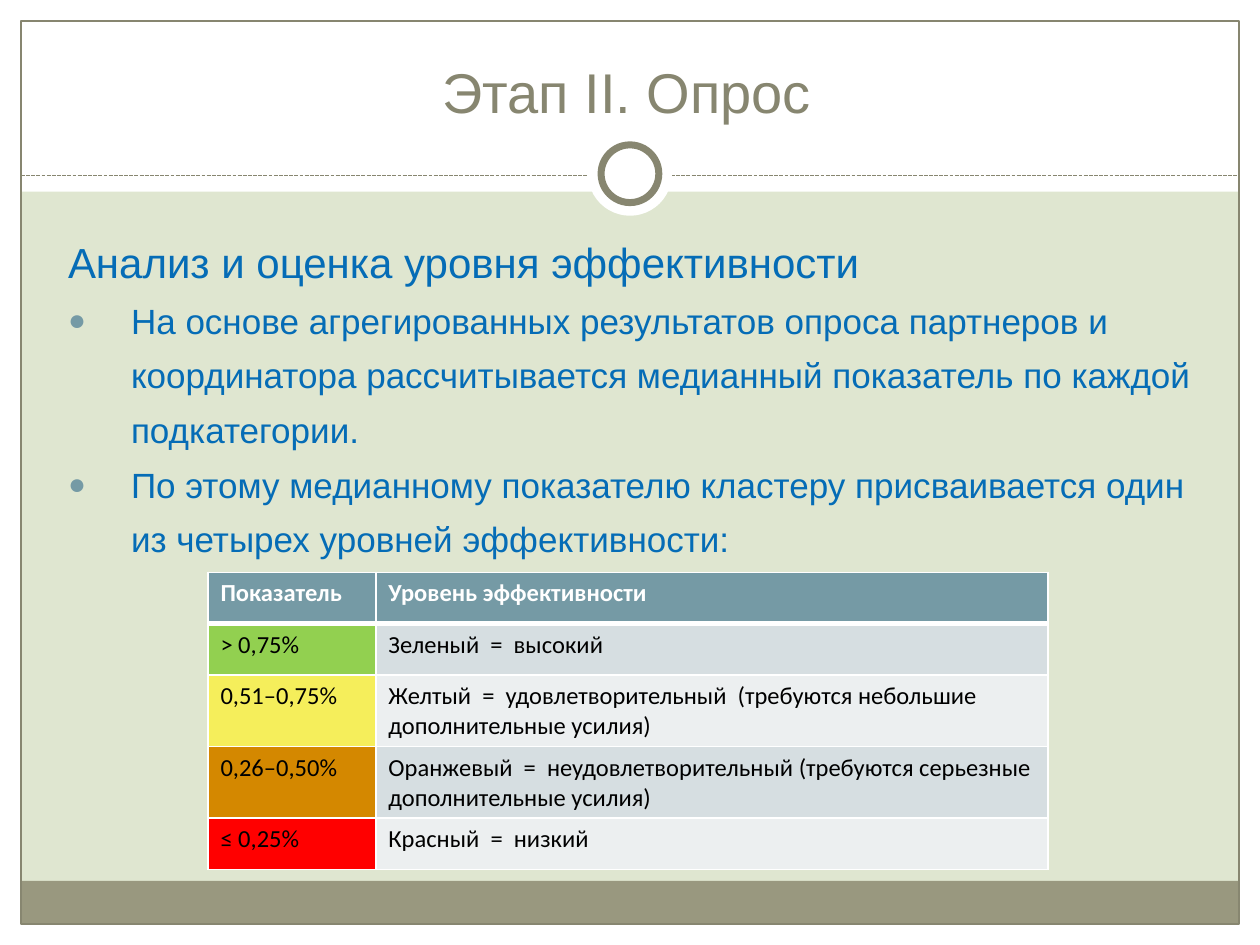
from dataclasses import dataclass
from typing import Optional

import pptx
import pptx.dml.color
import pptx.enum.dml
import pptx.enum.shapes
import pptx.enum.text
import pptx.oxml
import pptx.oxml.ns
import pptx.util
from lxml import etree

SHAPE = pptx.enum.shapes.MSO_SHAPE
ALIGN = pptx.enum.text.PP_ALIGN
ANCHOR = pptx.enum.text.MSO_ANCHOR
COLUMNS, ROWS = 120, 90
CELL = pptx.util.Inches(10) // COLUMNS


@dataclass(frozen=True)
class Theme:
    background: str = "DFE6D0"
    white: str = "FFFFFF"
    black: str = "000000"
    olive: str = "878670"
    footer: str = "99987F"
    blue: str = "056CB6"
    teal: str = "759AA5"
    bands: tuple = ("D6DEE1", "ECEFF0")
    heading_font: str = "Arial"
    table_font: str = "Calibri"
    title_size: int = 32
    lead_size: int = 24
    bullet_size: int = 20
    table_size: int = 14
    thin: float = 0.75
    ring: float = 4


@dataclass(frozen=True)
class Box:
    """A place in grid columns and rows."""
    left: float
    top: float
    width: float
    height: float

    def lengths(self) -> list:
        return [grid(n) for n in (self.left, self.top, self.width, self.height)]


@dataclass(frozen=True)
class Panel:
    box: Box
    fill: Optional[str] = None
    line: Optional[str] = None
    weight: float = 0
    kind: int = SHAPE.RECTANGLE


@dataclass(frozen=True)
class Level:
    score: str
    meaning: str
    color: str


THEME = Theme()

FRAME_PANELS = [
    Panel(Box(0, 88, COLUMNS, 2), THEME.white),
    Panel(Box(0, 0, COLUMNS, 18.25), THEME.white),
    Panel(Box(0, 0, 2, ROWS), THEME.white),
    Panel(Box(118, 0, 2, ROWS), THEME.white),
    Panel(Box(2, 83.9, 116, 4.1), THEME.footer),
    Panel(Box(2, 2, 116, 86), None, THEME.olive, THEME.thin),
]
RING_PANELS = [
    Panel(Box(56, 12.55, 8, 8), THEME.white, kind=SHAPE.OVAL),
    Panel(Box(57.25, 13.8, 5.5, 5.5), THEME.white, THEME.olive, THEME.ring, SHAPE.OVAL),
]
DIVIDER_ROW = 16.75
TITLE_BOX = Box(3.7, 2.5, 112, 10)
BODY_BOX = Box(4, 20, 111.6, 60)
TABLE_BOX = Box(19.8, 54.5, 80, 24.5)
TABLE_COLUMNS = (16, 64)

TITLE = "Этап II. Опрос"
LEAD = "Анализ и оценка уровня эффективности"
POINTS = [
    "На основе агрегированных результатов опроса партнеров и координатора "
    "рассчитывается медианный показатель по каждой подкатегории.",
    "По этому медианному показателю кластеру присваивается один из четырех "
    "уровней эффективности:",
]
HEADER = ("Показатель", "Уровень эффективности")
LEVELS = [
    Level("> 0,75%", "Зеленый  =  высокий", "92D050"),
    Level("0,51–0,75%", "Желтый  =  удовлетворительный  (требуются небольшие "
          "дополнительные усилия)", "F5EE5B"),
    Level("0,26–0,50%", "Оранжевый  =  неудовлетворительный (требуются серьезные "
          "дополнительные усилия)", "D48800"),
    Level("≤ 0,25%", "Красный  =  низкий", "FF0000"),
]


def grid(cells: float) -> int:
    return round(cells * CELL)


def rgb(color: str) -> pptx.dml.color.RGBColor:
    return pptx.dml.color.RGBColor.from_string(color)


def set_fill(fill, color: Optional[str]) -> None:
    if color is None:
        fill.background()
    else:
        fill.solid()
        fill.fore_color.rgb = rgb(color)


def write(paragraph, text: str, color: str, size: float, font: str, bold=False) -> None:
    run = paragraph.add_run()
    run.text = text
    for name, value in {"name": font, "size": pptx.util.Pt(size), "bold": bold}.items():
        setattr(run.font, name, value)
    run.font.color.rgb = rgb(color)


def draw_panel(slide, panel: Panel) -> None:
    shape = slide.shapes.add_shape(panel.kind, *panel.box.lengths())
    shape.shadow.inherit = False
    set_fill(shape.fill, panel.fill)
    set_fill(shape.line.fill, panel.line)
    if panel.line:
        shape.line.width = pptx.util.Pt(panel.weight)


def draw_divider(slide) -> None:
    row = grid(DIVIDER_ROW)
    divider = slide.shapes.add_connector(
        pptx.enum.shapes.MSO_CONNECTOR.STRAIGHT, grid(2), row, grid(118), row)
    divider.line.color.rgb = rgb(THEME.olive)
    divider.line.width = pptx.util.Pt(THEME.thin)
    divider.line.dash_style = pptx.enum.dml.MSO_LINE.SQUARE_DOT
    etree.SubElement(divider._element.spPr, pptx.oxml.ns.qn("a:effectLst"))


def add_text_frame(slide, box: Box, anchor):
    frame = slide.shapes.add_textbox(*box.lengths()).text_frame
    frame.word_wrap = True
    frame.vertical_anchor = anchor
    return frame


def indent(paragraph, margin: float, first_line: float) -> None:
    properties = paragraph._p.get_or_add_pPr()
    properties.set("marL", str(grid(margin)))
    properties.set("indent", str(grid(first_line)))


def add_bullet(paragraph) -> None:
    properties = paragraph._p.get_or_add_pPr()
    ns = pptx.oxml.ns.nsdecls("a")
    for xml in (f'<a:buClr {ns}><a:srgbClr val="{THEME.teal}"/></a:buClr>',
                f'<a:buSzPct {ns} val="85000"/>',
                f'<a:buFont {ns} typeface="{THEME.heading_font}"/>',
                f'<a:buChar {ns} char="●"/>'):
        properties.append(pptx.oxml.parse_xml(xml))


def draw_title(slide) -> None:
    paragraph = add_text_frame(slide, TITLE_BOX, ANCHOR.BOTTOM).paragraphs[0]
    paragraph.alignment = ALIGN.CENTER
    write(paragraph, TITLE, THEME.olive, THEME.title_size, THEME.heading_font)


def draw_body(slide) -> None:
    frame = add_text_frame(slide, BODY_BOX, ANCHOR.TOP)
    lead = frame.paragraphs[0]
    lead.line_spacing = 1.4
    lead.space_before = pptx.util.Pt(2)
    indent(lead, 1.3, 0)
    write(lead, LEAD, THEME.blue, THEME.lead_size, THEME.heading_font)
    for text in POINTS:
        point = frame.add_paragraph()
        point.line_spacing = 1.3
        indent(point, 7.3, -6)
        add_bullet(point)
        write(point, text, THEME.blue, THEME.bullet_size, THEME.heading_font)


def set_borders(cell, bottom: float) -> None:
    properties = cell._tc.get_or_add_tcPr()
    widths = {"lnL": 1, "lnR": 1, "lnT": 1, "lnB": bottom}
    for position, (side, width) in enumerate(widths.items()):
        properties.insert(position, pptx.oxml.parse_xml(
            f'<a:{side} {pptx.oxml.ns.nsdecls("a")} w="{pptx.util.Pt(width)}"><a:solidFill>'
            f'<a:srgbClr val="{THEME.white}"/></a:solidFill></a:{side}>'))


def fill_cell(cell, text: str, fill: str, header: bool) -> None:
    set_fill(cell.fill, fill)
    set_borders(cell, bottom=3 if header else 1)
    write(cell.text_frame.paragraphs[0], text, THEME.white if header else THEME.black,
          THEME.table_size, THEME.table_font, bold=header)


def draw_levels(slide) -> None:
    table = slide.shapes.add_table(
        len(LEVELS) + 1, len(TABLE_COLUMNS), *TABLE_BOX.lengths()).table
    for column, width in zip(table.columns, TABLE_COLUMNS):
        column.width = grid(width)
    for index, text in enumerate(HEADER):
        fill_cell(table.cell(0, index), text, THEME.teal, header=True)
    for row, level in enumerate(LEVELS, start=1):
        fill_cell(table.cell(row, 0), level.score, level.color, header=False)
        fill_cell(table.cell(row, 1), level.meaning, THEME.bands[(row - 1) % 2], header=False)


def main() -> None:
    deck = pptx.Presentation()
    deck.slide_width, deck.slide_height = grid(COLUMNS), grid(ROWS)
    slide = deck.slides.add_slide(deck.slide_layouts[6])
    set_fill(slide.background.fill, THEME.background)
    for panel in FRAME_PANELS:
        draw_panel(slide, panel)
    draw_divider(slide)
    for panel in RING_PANELS:
        draw_panel(slide, panel)
    draw_title(slide)
    draw_body(slide)
    draw_levels(slide)
    deck.save("out.pptx")


if __name__ == "__main__":
    main()
